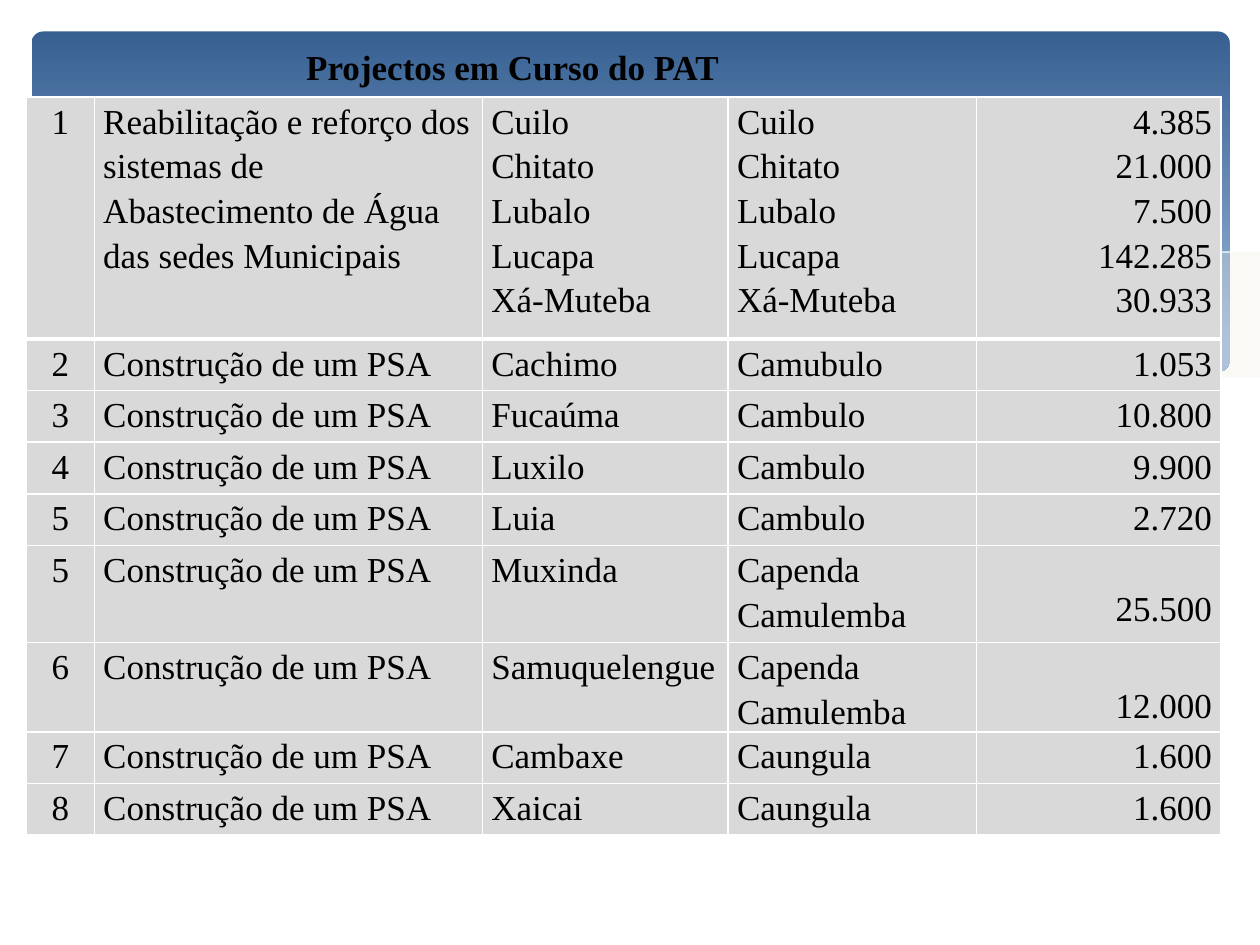
from typing import NamedTuple, Optional

from lxml.etree import SubElement
from pptx import Presentation
from pptx.dml.color import RGBColor
from pptx.enum.shapes import MSO_SHAPE
from pptx.enum.text import MSO_ANCHOR, PP_ALIGN
from pptx.oxml.ns import qn
from pptx.util import Inches, Pt

FONT = "Times New Roman"
BLACK = RGBColor(0x00, 0x00, 0x00)
WHITE = RGBColor(0xFF, 0xFF, 0xFF)
CELL_GRAY = RGBColor(0xD9, 0xD9, 0xD9)
BAND_DARK = RGBColor(0x37, 0x60, 0x92)
BAND_LIGHT = RGBColor(0x95, 0xB3, 0xD7)
WAVE_CREAM = RGBColor(0xEE, 0xEC, 0xE1)

COLUMN_WIDTHS = [0.54, 3.08, 1.95, 1.97, 1.94]
COLUMN_ALIGNMENTS = [PP_ALIGN.CENTER, PP_ALIGN.LEFT, PP_ALIGN.LEFT, PP_ALIGN.LEFT, PP_ALIGN.RIGHT]
PSA = "Construção de um PSA"
TOWNS = "Cuilo\nChitato\nLubalo\nLucapa\nXá-Muteba"


class Wave(NamedTuple):
    points: list[tuple[float, float]]
    fill: Optional[RGBColor] = None
    opacity: int = 100


class Project(NamedTuple):
    number: str
    work: str
    place: str
    municipality: str
    population: str
    height: float = 0.41
    population_top: float = 0


WAVES = [
    Wave([(9.76, 2), (9.48, 2.04), (9.06, 2.13), (8.61, 2.23), (8.05, 2.37), (7.53, 2.48),
          (7.06, 2.57), (6.61, 2.65), (7.05, 2.71), (7.57, 2.76), (8.03, 2.78), (8.54, 2.76),
          (8.97, 2.7), (9.35, 2.62), (9.63, 2.52), (9.76, 2.47)], WAVE_CREAM, 29),
    Wave([(8.93, 2.73), (8.37, 2.65), (7.75, 2.54), (7.06, 2.4), (6.29, 2.22), (5.84, 2.11),
          (5.41, 2.03), (4.89, 1.94), (4.42, 1.89), (3.99, 1.86), (3.61, 1.85), (3.28, 1.87),
          (2.86, 1.91), (3.42, 1.99), (4.04, 2.11), (4.49, 2.22), (5.3, 2.4), (6.01, 2.55),
          (6.65, 2.66), (7.22, 2.74), (7.73, 2.77), (8.18, 2.78), (8.57, 2.77)], WAVE_CREAM, 40),
    Wave([(3.09, 1.95), (3.44, 1.9), (3.87, 1.87), (4.33, 1.87), (4.89, 1.9), (5.56, 1.97),
          (6.36, 2.08), (7.27, 2.26), (7.95, 2.41), (8.69, 2.61), (9.07, 2.72)]),
    Wave([(6.13, 2.57), (6.72, 2.41), (7.48, 2.23), (8.06, 2.1), (8.66, 1.99), (9.1, 1.92),
          (9.51, 1.87), (9.75, 1.85)]),
    Wave([(9.77, 2.46), (9.5, 2.56), (9.1, 2.67), (8.63, 2.74), (8.09, 2.77), (7.44, 2.74),
          (6.68, 2.65), (6.03, 2.54), (5.29, 2.39), (4.47, 2.2), (3.91, 2.07), (3.4, 1.97),
          (2.92, 1.9), (2.5, 1.86), (1.93, 1.84), (1.46, 1.85), (1.06, 1.89), (0.67, 1.97),
          (0.4, 2.05), (0.23, 2.13), (0.23, 3.29), (9.77, 3.29)], WHITE),
]

PROJECTS = [
    Project("1", "Reabilitação e reforço dos sistemas de Abastecimento de Água das sedes Municipais",
            TOWNS, TOWNS, "4.385\n21.000\n7.500\n142.285\n30.933", height=1.92),
    Project("2", PSA, "Cachimo", "Camubulo", "1.053"),
    Project("3", PSA, "Fucaúma", "Cambulo", "10.800"),
    Project("4", PSA, "Luxilo", "Cambulo", "9.900"),
    Project("5", PSA, "Luia", "Cambulo", "2.720"),
    Project("5", PSA, "Muxinda", "Capenda Camulemba", "25.500", height=0.77, population_top=0.31),
    Project("6", PSA, "Samuquelengue", "Capenda Camulemba", "12.000", population_top=0.31),
    Project("7", PSA, "Cambaxe", "Caungula", "1.600"),
    Project("8", PSA, "Xaicai", "Caungula", "1.600"),
]


def draw_band(slide) -> None:
    band = slide.shapes.add_shape(
        MSO_SHAPE.ROUNDED_RECTANGLE, Inches(0.25), Inches(0.25), Inches(9.51), Inches(2.7))
    band.adjustments[0] = 0.034
    band.shadow.inherit = False
    band.line.fill.background()
    band.fill.gradient()
    band.fill.gradient_angle = 270
    stops = band.fill.gradient_stops
    for stop, color, position in zip(stops, (BAND_DARK, BAND_LIGHT), (0, 0.9)):
        stop.color.rgb = color
        stop.position = position


def draw_wave(slide, wave: Wave) -> None:
    """Draw a filled wave, or a white hairline when the wave has no fill."""
    builder = slide.shapes.build_freeform(*wave.points[0], scale=Inches(1))
    builder.add_line_segments(wave.points[1:], close=wave.fill is not None)
    shape = builder.convert_to_shape()
    shape.shadow.inherit = False
    if wave.fill is None:
        shape.fill.background()
        shape.line.color.rgb = WHITE
        shape.line.width = Pt(0)
        return
    shape.line.fill.background()
    shape.fill.solid()
    shape.fill.fore_color.rgb = wave.fill
    if wave.opacity < 100:
        color = shape.element.spPr.find(qn("a:solidFill")).find(qn("a:srgbClr"))
        SubElement(color, qn("a:alpha"), val=str(wave.opacity * 1000))


def set_borders(cell, top: float, bottom: float) -> None:
    properties = cell._tc.get_or_add_tcPr()
    for side, width in (("L", 1), ("R", 1), ("T", top), ("B", bottom)):
        line = SubElement(properties, qn(f"a:ln{side}"), w=str(Pt(width)))
        SubElement(SubElement(line, qn("a:solidFill")), qn("a:srgbClr"), val=str(WHITE))


def fill_cell(cell, text: str, alignment: PP_ALIGN, top: float, default_insets: bool) -> None:
    if not default_insets:
        cell.margin_left = cell.margin_right = Inches(0.07)
        cell.margin_top, cell.margin_bottom = Inches(top), 0
    cell.text = text
    for paragraph in cell.text_frame.paragraphs:
        paragraph.alignment = alignment
        paragraph.line_spacing = 1.0 if default_insets else 1.15
        paragraph.font.name = FONT
        paragraph.font.size = Pt(20)
        paragraph.font.color.rgb = BLACK


def draw_projects(slide) -> None:
    table = slide.shapes.add_table(
        len(PROJECTS), len(COLUMN_WIDTHS), Inches(0.21), Inches(0.77), Inches(sum(COLUMN_WIDTHS)),
        Inches(sum(project.height for project in PROJECTS))).table
    table.first_row = table.horz_banding = False
    for column, width in zip(table.columns, COLUMN_WIDTHS):
        column.width = Inches(width)
    for row_index, project in enumerate(PROJECTS):
        table.rows[row_index].height = Inches(project.height)
        for column_index, alignment in enumerate(COLUMN_ALIGNMENTS):
            cell = table.cell(row_index, column_index)
            top = project.population_top if column_index == 4 else 0
            fill_cell(cell, project[column_index], alignment, top,
                      default_insets=column_index == 0 and row_index < 2)
            set_borders(cell, top=3 if row_index == 1 else 1, bottom=3 if row_index == 0 else 1)
            cell.fill.solid()
            cell.fill.fore_color.rgb = CELL_GRAY


def place_title(slide) -> None:
    """Format the title and bring it in front of the band."""
    title = slide.shapes.title
    title.left, title.top = Inches(2.33), Inches(0.31)
    title.width, title.height = Inches(5.83), Inches(0.43)
    title.text_frame.text = "Projectos em Curso do PAT"
    title.text_frame.vertical_anchor = MSO_ANCHOR.TOP
    paragraph = title.text_frame.paragraphs[0]
    paragraph.alignment = PP_ALIGN.LEFT
    paragraph.font.name = FONT
    paragraph.font.size = Pt(20)
    paragraph.font.bold = True
    paragraph.font.color.rgb = BLACK
    title.element.getparent().append(title.element)


def main() -> None:
    presentation = Presentation()
    presentation.slide_width, presentation.slide_height = Inches(10), Inches(7.5)
    slide = presentation.slides.add_slide(presentation.slide_layouts[5])
    draw_band(slide)
    for wave in WAVES:
        draw_wave(slide, wave)
    draw_projects(slide)
    place_title(slide)
    presentation.save("out.pptx")


if __name__ == "__main__":
    main()
